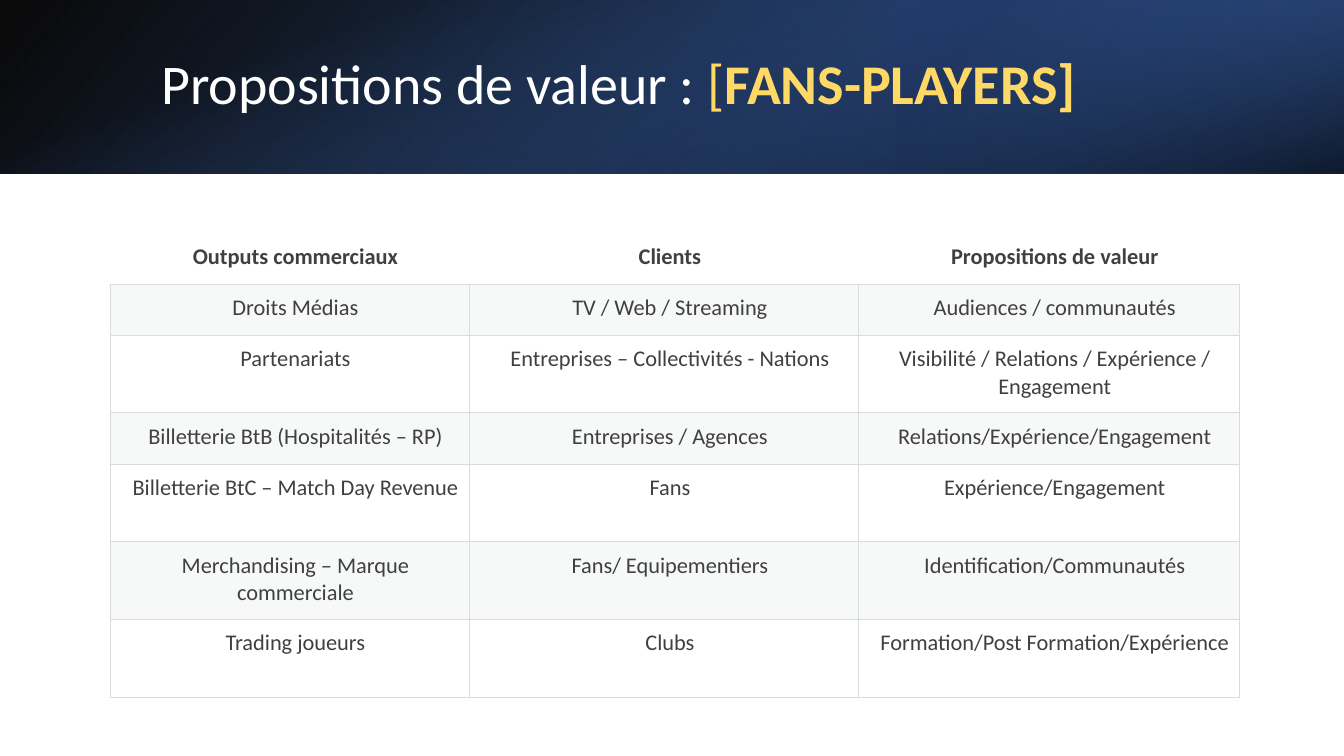
from lxml import etree
from pptx import Presentation
from pptx.dml.color import RGBColor
from pptx.enum.shapes import MSO_SHAPE
from pptx.enum.text import MSO_ANCHOR, PP_ALIGN
from pptx.oxml.ns import qn
from pptx.util import Inches, Pt

COLORS = {
    "black": "000000", "white": "FFFFFF", "navy": "203864", "blue": "4472C4",
    "deep": "2F5597", "gold": "FFD966", "text": "404040",
    "stripe": "D8DEDC", "border": "D8DCDC",
}
BAND_H = 22.93  # height of the title band, in % of the slide

ROWS = [
    ("Outputs commerciaux", "Clients", "Propositions de valeur"),
    ("Droits Médias", "TV / Web / Streaming", "Audiences / communautés"),
    ("Partenariats", "Entreprises – Collectivités - Nations",
     "Visibilité / Relations / Expérience / Engagement"),
    ("Billetterie BtB (Hospitalités – RP)", "Entreprises / Agences",
     "Relations/Expérience/Engagement"),
    ("Billetterie BtC – Match Day Revenue", "Fans", "Expérience/Engagement"),
    ("Merchandising – Marque commerciale", "Fans/ Equipementiers",
     "Identification/Communautés"),
    ("Trading joueurs", "Clubs", "Formation/Post Formation/Expérience"),
]
SHORT, TALL = 6.78, 10.27  # row heights, in %
ROW_HEIGHTS = [SHORT, SHORT, TALL, SHORT, TALL, TALL, TALL]
COL_WIDTHS = [26.78, 28.95, 28.32]


class Deck:
    """Style and current slide; lengths are percentages of the slide's size."""

    font = "Calibri"

    def __init__(self):
        self.prs = Presentation()
        self.prs.slide_width, self.prs.slide_height = Inches(13.33), Inches(7.5)
        self.slide = self.prs.slides.add_slide(self.prs.slide_layouts[6])

    def x(self, share):
        return round(self.prs.slide_width * share / 100)

    def y(self, share):
        return round(self.prs.slide_height * share / 100)

    def box(self, left, top, width, height):
        return self.x(left), self.y(top), self.x(width), self.y(height)

    def color(self, name):
        return RGBColor.from_string(COLORS[name])

    def alpha(self, fill_xml, percent):
        clr = next(fill_xml.iter(qn("a:srgbClr")))
        etree.SubElement(clr, qn("a:alpha")).set("val", str(percent * 1000))

    def style(self, r, size, color, bold=False):
        r.font.name, r.font.size, r.font.bold = self.font, Pt(size), bold
        r.font.color.rgb = self.color(color)

    def gradient(self, area, stops, angle, rotation=0, flip=False):
        """Gradient rectangle covering area once it has been rotated."""
        left, top, w, h = self.box(*area)
        if rotation == 90:
            left, top, w, h = left + (w - h) // 2, top + (h - w) // 2, h, w
        sp = self.slide.shapes.add_shape(MSO_SHAPE.RECTANGLE, left, top, w, h)
        sp.shadow.inherit = False
        sp.line.fill.background()
        sp.rotation = rotation
        if flip:
            sp._element.spPr.find(qn("a:xfrm")).set("flipH", "1")
        sp.fill.gradient()
        sp.fill.gradient_angle = 360 - angle
        for stop, (position, name, opacity) in zip(sp.fill.gradient_stops, stops):
            stop.position = position / 100
            stop.color.rgb = self.color(name)
        stop_xml = sp._element.spPr.iter(qn("a:gs"))
        for gs, (position, name, opacity) in zip(stop_xml, stops):
            self.alpha(gs, opacity)

    def title(self, area, parts):
        tf = self.slide.shapes.add_textbox(*self.box(*area)).text_frame
        tf.word_wrap = True
        tf.vertical_anchor = MSO_ANCHOR.MIDDLE
        p = tf.paragraphs[0]
        p.line_spacing = 0.9
        for text, color, bold in parts:
            r = p.add_run()
            r.text = text
            self.style(r, 40, color, bold)

    def borders(self, cell, sides):
        tc_pr = cell._tc.get_or_add_tcPr()
        for i, side in enumerate("LRTB"):
            ln = etree.Element(qn(f"a:ln{side}"), w=str(Pt(0.75)))
            if side in sides:
                fill = etree.SubElement(ln, qn("a:solidFill"))
                etree.SubElement(fill, qn("a:srgbClr"), val=COLORS["border"])
            else:
                etree.SubElement(ln, qn("a:noFill"))
            tc_pr.insert(i, ln)

    def cell(self, cell, text, header, striped):
        cell.margin_left = Inches(0.21)
        cell.margin_right = cell.margin_top = cell.margin_bottom = Inches(0.1)
        cell.text_frame.text = text
        p = cell.text_frame.paragraphs[0]
        p.alignment = PP_ALIGN.CENTER
        self.style(p.runs[0], 16, "text", header)
        if striped:
            cell.fill.solid()
            cell.fill.fore_color.rgb = self.color("stripe")
            self.alpha(cell._tc.tcPr, 20)
        else:
            cell.fill.background()
        self.borders(cell, "B" if header else "LRTB")

    def table(self, left, top, widths, heights, rows):
        area = self.box(left, top, sum(widths), sum(heights))
        table = self.slide.shapes.add_table(len(rows), len(widths), *area).table
        table.first_row = table.horz_banding = False
        for column, width in zip(table.columns, widths):
            column.width = self.x(width)
        for i, (row, height) in enumerate(zip(table.rows, heights)):
            row.height = self.y(height)
            for cell, text in zip(row.cells, rows[i]):
                self.cell(cell, text, header=i == 0, striped=i % 2 == 1)


def main():
    deck = Deck()

    # Title band: three layered gradients
    band = (0, 0, 100, BAND_H)
    deck.gradient(band, [(0, "black", 96), (100, "deep", 100)], 140, flip=True)
    deck.gradient((66.67, 0, 33.33, BAND_H),
                  [(19, "navy", 68), (100, "blue", 79)], 320, 180, flip=True)
    deck.gradient(band, [(23, "blue", 0), (99, "black", 74)], 340, 90)

    # Title
    deck.title((11.25, 5.07, 82.37, 12.8), [
        ("Propositions de valeur : ", "white", False),
        ("[", "gold", False),
        ("FANS-PLAYERS]", "gold", True),
    ])

    # Value propositions by commercial output
    deck.table(8.18, 30.8, COL_WIDTHS, ROW_HEIGHTS, ROWS)

    deck.prs.save("out.pptx")


if __name__ == "__main__":
    main()
